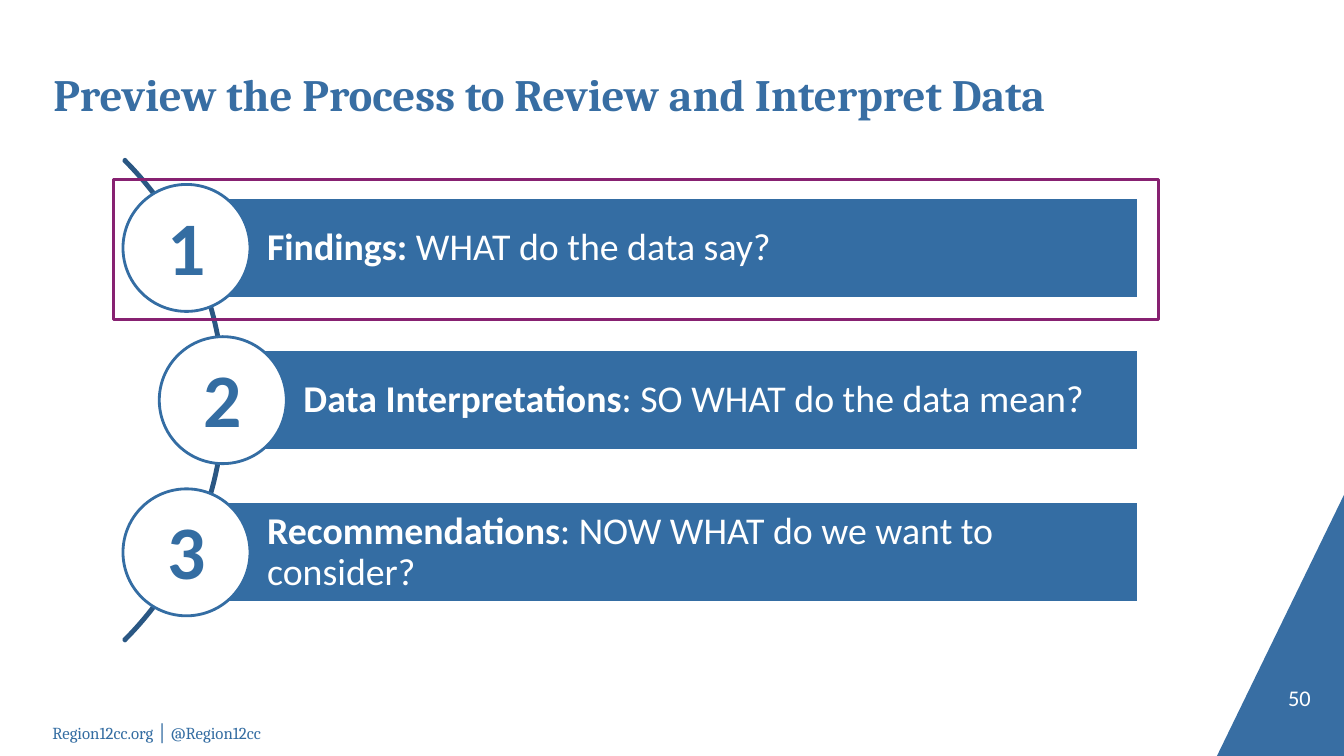
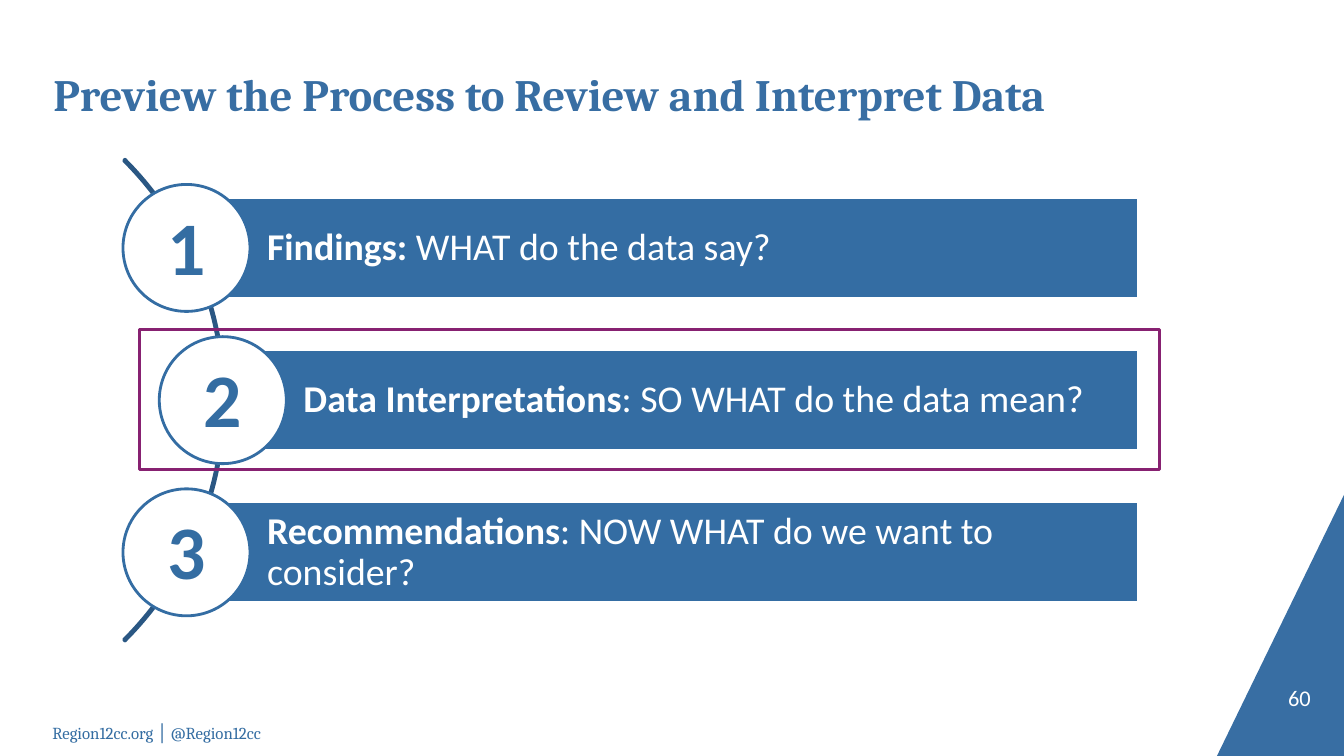
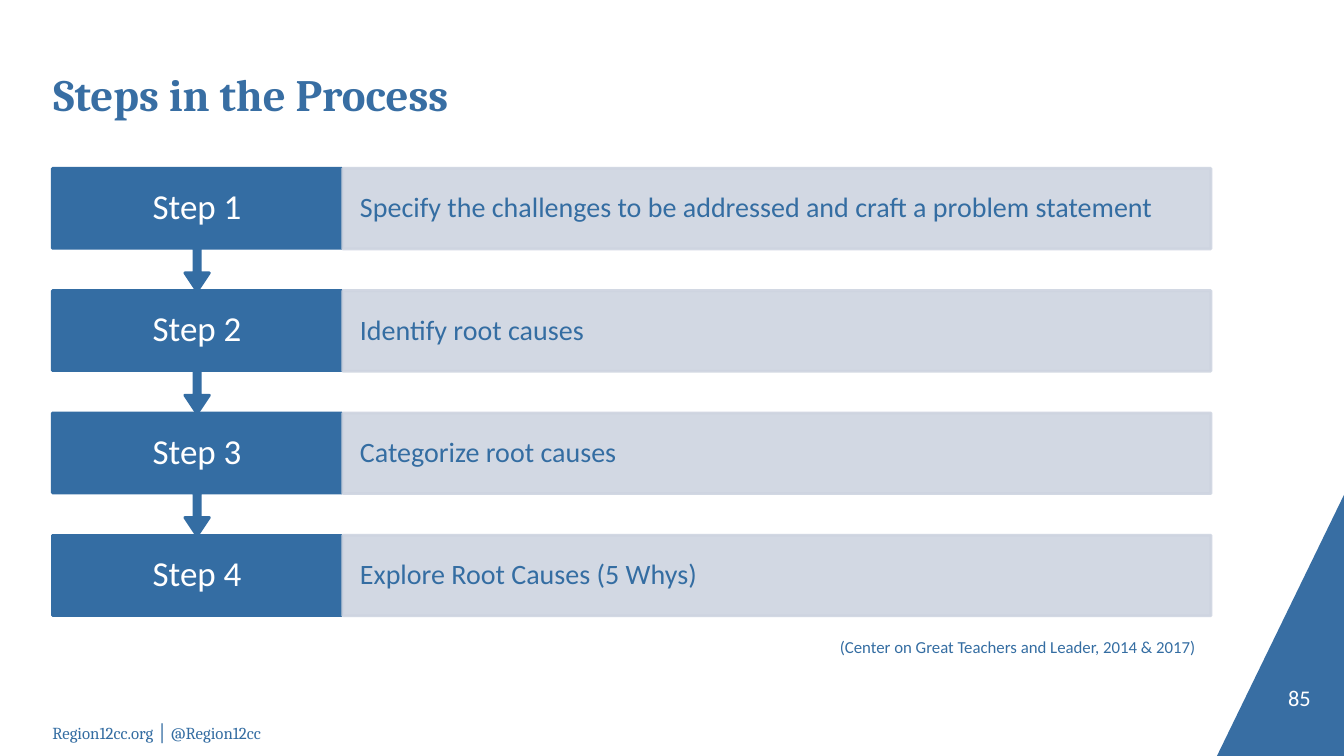
"""Build three slides on reviewing data and working through root causes."""
from pptx import Presentation
from pptx.dml.color import RGBColor
from pptx.enum.shapes import MSO_SHAPE
from pptx.enum.text import MSO_ANCHOR, PP_ALIGN
from pptx.oxml.ns import qn
from pptx.util import Inches, Pt
from lxml.etree import SubElement


class Theme:
    blue = "346DA3"
    title = "386EA3"
    text = "346DA2"
    arc = "2A5783"
    pale = "CED4E0"
    mark = "872171"
    white = "FFFFFF"
    serif = "Cambria"
    sans = "Calibri"
    head = 32
    digit = 54
    bar = 27
    step = 25
    body = 20
    page = 16
    small = 12
    line = 2


FOOT = "Region12cc.org │ @Region12cc"
REVIEW = "Preview the Process to Review and Interpret Data"
STAGES = [
    ("Findings: ", "WHAT do the data say?", 1.85),
    ("Data Interpretations", ": SO WHAT do the data mean?", 2.21),
    ("Recommendations", ": NOW WHAT do we want to consider?", 1.85),
]
VIEWS = [
    ("50", (1.13, 1.78, 10.36, 1.39)),
    ("60", (1.38, 3.27, 10.12, 1.39)),
]
STEPS = [
    "Specify the challenges to be addressed and craft a problem statement",
    "Identify root causes",
    "Categorize root causes",
    "Explore Root Causes (5 Whys)",
]
SOURCE = "(Center on Great Teachers and Leader, 2014 & 2017)"


def write(item, runs, size, color, font=Theme.sans, align=PP_ALIGN.LEFT,
          anchor=MSO_ANCHOR.MIDDLE, pad=(0, 0, 0, 0), space=1.0):
    """Fill a shape with one paragraph of (text, bold) runs."""
    frame = item.text_frame
    frame.word_wrap = True
    frame.vertical_anchor = anchor
    (frame.margin_left, frame.margin_top,
     frame.margin_right, frame.margin_bottom) = map(Inches, pad)
    para = frame.paragraphs[0]
    para.alignment = align
    para.line_spacing = space
    for text, bold in runs:
        run = para.add_run()
        run.text = text
        run.font.name = font
        run.font.size = Pt(size)
        run.font.bold = bold
        run.font.color.rgb = RGBColor.from_string(color)


def label(slide, box, text, size, color, bold=False, **style):
    """Add a text box."""
    item = slide.shapes.add_textbox(*map(Inches, box))
    write(item, [(text, bold)], size, color, **style)


def paint(item, fill=None, line=None):
    """Set the fill and outline of a shape."""
    item.shadow.inherit = False
    if fill:
        item.fill.solid()
        item.fill.fore_color.rgb = RGBColor.from_string(fill)
    else:
        item.fill.background()
    if line:
        item.line.color.rgb = RGBColor.from_string(line)
        item.line.width = Pt(Theme.line)
    else:
        item.line.fill.background()


def draw(slide, kind, box, fill=None, line=None):
    """Add a preset shape."""
    item = slide.shapes.add_shape(kind, *map(Inches, box))
    paint(item, fill, line)
    return item


def fade(item, share):
    """Make the fill and outline of a shape partly transparent."""
    for color in item._element.spPr.iter(qn("a:srgbClr")):
        SubElement(color, qn("a:alpha")).set("val", str(share * 1000))


def start(deck, title, page):
    """Add a slide with the corner, footer, title and page number."""
    slide = deck.slides.add_slide(deck.slide_layouts[6])
    pen = slide.shapes.build_freeform(Inches(13.33), Inches(4.91))
    pen.add_line_segments([(Inches(12.07), Inches(7.5)),
                           (Inches(13.33), Inches(7.5))])
    paint(pen.convert_to_shape(), Theme.title)
    label(slide, (0.52, 7.17, 2.33, 0.2), FOOT, Theme.small, Theme.text,
          font=Theme.serif)
    label(slide, (0.53, 0.66, 10.97, 0.54), title, Theme.head, Theme.title,
          bold=True, font=Theme.serif)
    label(slide, (12.01, 6.75, 0.99, 0.3), page, Theme.page, Theme.white,
          align=PP_ALIGN.RIGHT, anchor=MSO_ANCHOR.BOTTOM)
    return slide


def review(deck, page, frame):
    """Add the three stages with one of them framed."""
    slide = start(deck, REVIEW, page)
    arc = draw(slide, MSO_SHAPE.BLOCK_ARC, (-4.53, 0.59, 6.76, 6.76),
               line=Theme.arc)
    for pos, value in enumerate((189, 27, 0.003)):
        arc.adjustments[pos] = value
    top, pitch, high, size, right = 1.96, 1.51, 1, 1.26, 11.29
    for row, (lead, rest, left) in enumerate(STAGES):
        y = top + row * pitch
        bar = draw(slide, MSO_SHAPE.RECTANGLE, (left, y, right - left, high),
                   Theme.blue, Theme.white)
        write(bar, [(lead, True), (rest, False)], Theme.bar, Theme.white,
              pad=(0.8, 0.07, 0.07, 0.07), space=0.9)
        disc = draw(slide, MSO_SHAPE.OVAL,
                    (left - size / 2, y + (high - size) / 2, size, size),
                    Theme.white, Theme.blue)
        write(disc, [(str(row + 1), True)], Theme.digit, Theme.text,
              align=PP_ALIGN.CENTER, pad=(0, 0, 0, 0.06))
    draw(slide, MSO_SHAPE.RECTANGLE, frame, line=Theme.mark)


def steps(deck):
    """Add the chain of steps."""
    slide = start(deck, "Steps in the Process", "85")
    top, end, high, drop = 1.67, 5.31, 0.8, 1.22
    last = len(STEPS) - 1
    for row, text in enumerate(STEPS):
        y = top + row * (end - top) / last
        if row < last:
            head = draw(slide, MSO_SHAPE.DOWN_ARROW_CALLOUT,
                        (0.52, y, 2.87, drop), Theme.blue, Theme.blue)
            for pos, value in enumerate((0.05, 0.1, 0.15, 0.65)):
                head.adjustments[pos] = value
        else:
            head = draw(slide, MSO_SHAPE.RECTANGLE, (0.52, y, 2.87, high),
                        Theme.blue, Theme.blue)
        write(head, [(f"Step {row + 1}", False)], Theme.step, Theme.white,
              align=PP_ALIGN.CENTER, space=0.9)
        body = draw(slide, MSO_SHAPE.RECTANGLE, (3.4, y, 8.61, high),
                    Theme.pale, Theme.pale)
        fade(body, 90)
        write(body, [(text, False)], Theme.body, Theme.text,
              pad=(0.17, 0, 0.17, 0), space=0.9)
    label(slide, (7.07, 6.27, 4.89, 0.3), SOURCE, Theme.small, Theme.text,
          align=PP_ALIGN.RIGHT, anchor=MSO_ANCHOR.TOP,
          pad=(0.1, 0.05, 0.1, 0.05))


def main():
    """Build and save the deck."""
    deck = Presentation()
    deck.slide_width, deck.slide_height = Inches(13.33), Inches(7.5)
    for page, frame in VIEWS:
        review(deck, page, frame)
    steps(deck)
    deck.save("out.pptx")


if __name__ == "__main__":
    main()
